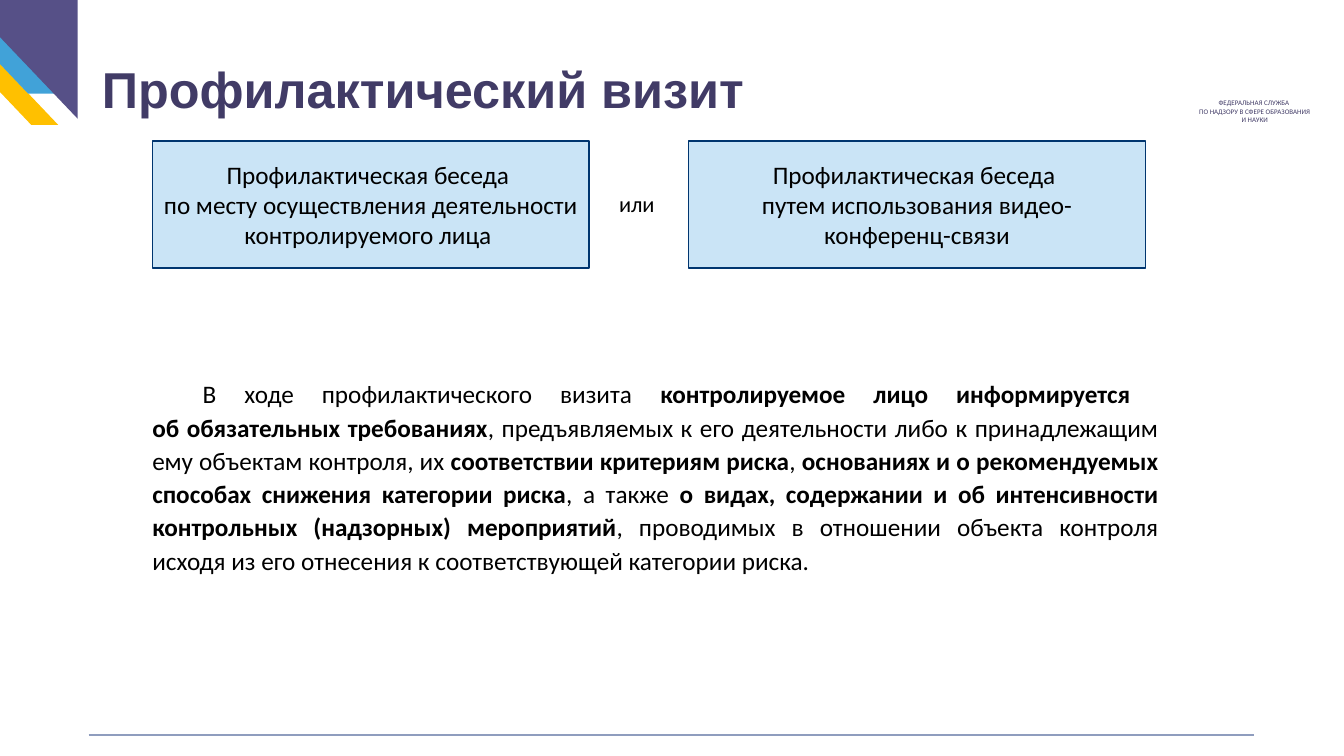
from copy import deepcopy

from lxml import etree
from pptx import Presentation, util as u
from pptx.dml.color import RGBColor
from pptx.enum import shapes, text
from pptx.oxml import ns

PURPLE = RGBColor(0x56, 0x50, 0x87)
BLUE = RGBColor(0x41, 0xA2, 0xD8)
YELLOW = RGBColor(0xFF, 0xC0, 0x00)
INDIGO = RGBColor(0x41, 0x3B, 0x66)
PALE = RGBColor(0xCA, 0xE4, 0xF6)
NAVY = RGBColor(0x00, 0x35, 0x6F)
RULE = RGBColor(0x8F, 0x9D, 0xBE)
BLACK = RGBColor(0x00, 0x00, 0x00)

WIDTH, HEIGHT = u.Inches(13.33), u.Inches(7.5)
PLAIN = {"name": "Calibri", "size": u.Pt(18), "bold": False}
STRONG = {**PLAIN, "bold": True}
SMALL = {**PLAIN, "size": u.Pt(16)}
TINY = {**PLAIN, "size": u.Pt(5)}
HEADING = {"name": "Arial", "size": u.Pt(36), "bold": True}

BODY = [
    ("В ходе профилактического визита ", PLAIN),
    ("контролируемое лицо информируется \nоб обязательных требованиях", STRONG),
    (", предъявляемых к его деятельности либо к принадлежащим "
     "ему объектам контроля, их ", PLAIN),
    ("соответствии критериям риска", STRONG),
    (", ", PLAIN),
    ("основаниях и о рекомендуемых способах снижения категории риска", STRONG),
    (", а также ", PLAIN),
    ("о видах, содержании и об интенсивности контрольных (надзорных) мероприятий",
     STRONG),
    (", проводимых в отношении объекта контроля исходя из его отнесения "
     "к соответствующей категории риска.", PLAIN),
]


def percent(left, top, width, height):
    """Box from percentages of the slide."""
    return tuple(int(share * side / 100) for share, side in
                 zip((left, top, width, height), (WIDTH, HEIGHT) * 2))


def inside(box, left, top, width, height):
    """Box from shares of another box."""
    return (int(box[0] + left * box[2]), int(box[1] + top * box[3]),
            int(width * box[2]), int(height * box[3]))


def set_all(target, values):
    for name, value in values.items():
        setattr(target, name, value)


def place(item, box):
    set_all(item, dict(zip(("left", "top", "width", "height"), box)))


def write(para, words, style, color=BLACK):
    """Add formatted words; a newline becomes a line break of the same style."""
    for number, line in enumerate(words.split("\n")):
        if number:
            para.add_line_break()
            para._p[-1].append(deepcopy(span._r.rPr))
        span = para.add_run()
        span.text = line
        set_all(span.font, style)
        span.font.color.rgb = color


def add_shape(page, kind, box, fill, line=None):
    item = page.shapes.add_shape(kind, *box)
    item.shadow.inherit = False
    item.fill.solid()
    item.fill.fore_color.rgb = fill
    if line is None:
        item.line.fill.background()
    else:
        item.line.color.rgb = line
        item.line.width = u.Pt(1)
    return item


def add_label(page, box, lines, style, color=BLACK, align=text.PP_ALIGN.LEFT):
    frame = page.shapes.add_textbox(*box).text_frame
    frame.word_wrap = True
    for number, line in enumerate(lines):
        para = frame.add_paragraph() if number else frame.paragraphs[0]
        para.alignment = align
        write(para, line, style, color)


def corner(page, box):
    # Two stripes under a triangle in the top left corner
    kinds = shapes.MSO_SHAPE
    for left, top, fill in ((-1.08, 0.03, YELLOW), (-1.12, -0.22, BLUE)):
        stripe = add_shape(page, kinds.PARALLELOGRAM,
                           inside(box, left, top, 1.83, 0.97), fill)
        stripe.adjustments[0] = 0.95
        stripe._element.spPr.xfrm.set("flipH", "1")
    triangle = add_shape(page, kinds.RIGHT_TRIANGLE,
                         inside(box, -0.47, -0.01, 1.47, 0.96), PURPLE)
    for flip in ("flipH", "flipV"):
        triangle._element.spPr.xfrm.set(flip, "1")


def heading(page, box):
    title = page.shapes.title
    place(title, box)
    set_all(title.text_frame, {"vertical_anchor": text.MSO_ANCHOR.TOP,
                               "auto_size": text.MSO_AUTO_SIZE.NONE,
                               "word_wrap": True})
    para = title.text_frame.paragraphs[0]
    para.alignment = text.PP_ALIGN.LEFT
    write(para, "Профилактический визит", HEADING, INDIGO)


def choices(page, box):
    # Two forms of the visit with a word between them
    for left, width, words in (
            (0, 0.44, "Профилактическая беседа \nпо месту осуществления "
                      "деятельности контролируемого лица "),
            (0.54, 0.46, "Профилактическая беседа \nпутем использования "
                         "видео-конференц-связи")):
        card = add_shape(page, shapes.MSO_SHAPE.RECTANGLE,
                         inside(box, left, 0, width, 1), PALE, NAVY)
        set_all(card.text_frame, {"word_wrap": True,
                                  "vertical_anchor": text.MSO_ANCHOR.MIDDLE})
        para = card.text_frame.paragraphs[0]
        para.alignment = text.PP_ALIGN.CENTER
        write(para, words, PLAIN)
    add_label(page, inside(box, 0.46, 0.35, 0.06, 0.29), ["или"], SMALL)


def explanation(page, box):
    body = page.placeholders[1]
    place(body, box)
    frame = body.text_frame
    set_all(frame, dict.fromkeys(
        ("margin_left", "margin_top", "margin_right", "margin_bottom"), 0))
    set_all(frame, {"vertical_anchor": text.MSO_ANCHOR.TOP,
                    "auto_size": text.MSO_AUTO_SIZE.NONE, "word_wrap": True})
    para = frame.paragraphs[0]
    # First-line indent, no bullet
    props = para._p.get_or_add_pPr()
    props.set("marL", "0")
    props.set("indent", str(u.Inches(0.5)))
    etree.SubElement(props, ns.qn("a:buNone"))
    set_all(para, {"alignment": text.PP_ALIGN.JUSTIFY, "line_spacing": 1.1,
                   "space_before": u.Pt(0)})
    for words, style in BODY:
        write(para, words, style)


def footer_rule(page, box):
    left, top, width, _ = box
    rule = page.shapes.add_connector(shapes.MSO_CONNECTOR.STRAIGHT,
                                     left, top, left + width, top)
    rule.line.color.rgb = RULE
    rule.line.width = u.Pt(1.5)
    etree.SubElement(rule._element.spPr, ns.qn("a:effectLst"))


def main():
    deck = Presentation()
    deck.slide_width, deck.slide_height = WIDTH, HEIGHT
    page = deck.slides.add_slide(deck.slide_layouts[1])
    corner(page, percent(0, 0, 5.78, 16.53))
    add_label(page, percent(88.3, 12.4, 10.13, 4.67),
              ["ФЕДЕРАЛЬНАЯ СЛУЖБА ", "ПО НАДЗОРУ В СФЕРЕ ОБРАЗОВАНИЯ И НАУКИ"],
              TINY, INDIGO, text.PP_ALIGN.CENTER)
    heading(page, percent(6.83, 7.07, 51.24, 9.47))
    footer_rule(page, percent(6.6, 97.2, 86.72, 0))
    choices(page, percent(11.33, 18.67, 73.89, 16.8))
    explanation(page, percent(11.33, 49.7, 74.87, 31.33))
    deck.save("out.pptx")


if __name__ == "__main__":
    main()
